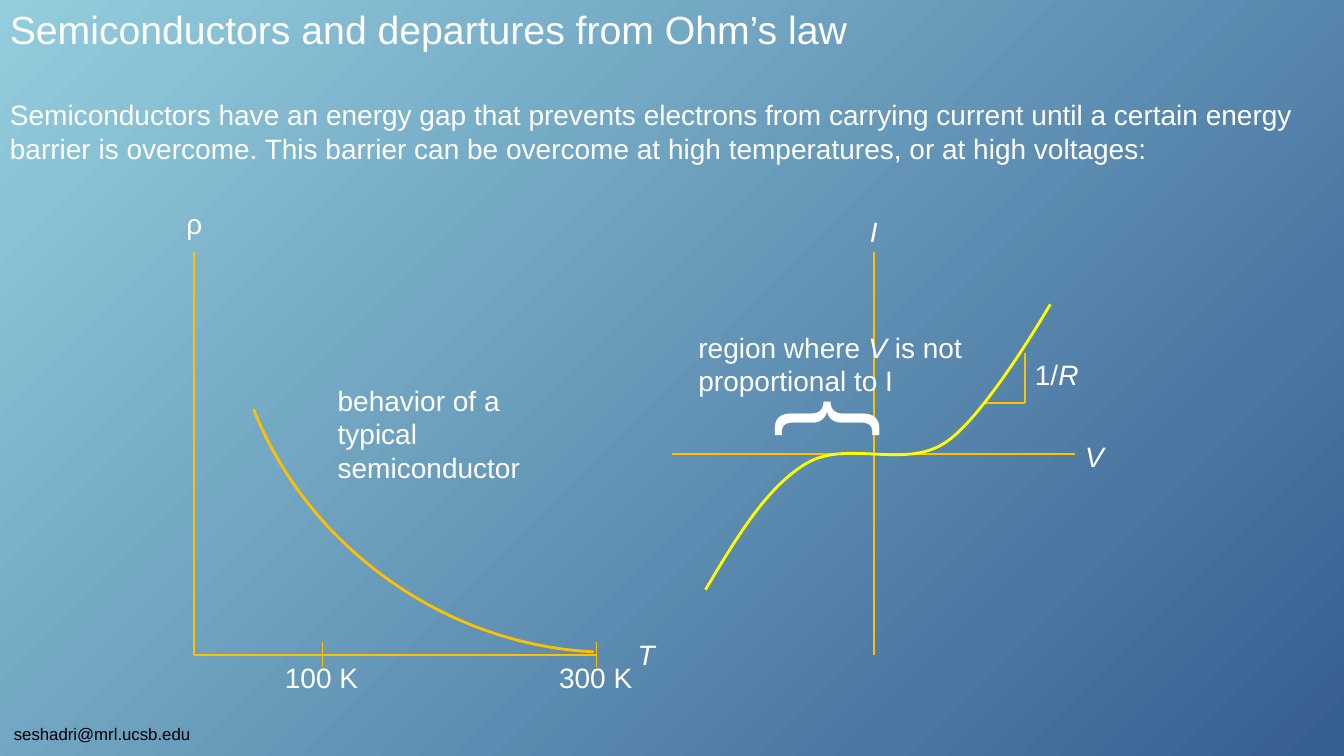
"""Build the slide on semiconductors and departures from Ohm's law."""
from lxml.etree import SubElement
from pptx import Presentation
from pptx.dml.color import RGBColor
from pptx.enum.shapes import MSO_CONNECTOR, MSO_SHAPE
from pptx.enum.text import MSO_AUTO_SIZE
from pptx.oxml.ns import qn
from pptx.util import Cm, Pt

COLORS = {
    "sky": "93CDDD",
    "navy": "376092",
    "text": "FFFFFF",
    "footer": "000000",
    "axis": "FFC000",
    "current": "FFFF00",
}
FONT = "Arial"
AXIS_TOP, AXIS_BOTTOM = 6.35, 16.51
CURRENT_START = (17.78, 14.86)
CURRENT_SEGMENTS = [
    [(18.54, 13.59), (19.3, 12.29), (20.32, 11.68)],
    [(21.34, 11.07), (22.81, 11.84), (23.83, 11.15)],
    [(24.84, 10.49), (26.47, 7.67), (26.47, 7.67)],
]


def color(name):
    """Return the named palette colour."""
    return RGBColor.from_string(COLORS[name])


def paint_background(slide):
    """Fill the slide with the diagonal gradient."""
    fill = slide.background.fill
    fill.gradient()
    fill.gradient_angle = 315
    for stop, name, position in zip(fill.gradient_stops, ("sky", "navy"), (0, 0.99)):
        stop.color.rgb = color(name)
        stop.position = position


def add_label(slide, box, runs, size=20, wrap=False, ink="text", rotation=0):
    """Add a text box from (text, italic) runs."""
    label = slide.shapes.add_textbox(*map(Cm, box))
    label.rotation = rotation
    frame = label.text_frame
    frame.word_wrap = wrap
    frame.auto_size = MSO_AUTO_SIZE.SHAPE_TO_FIT_TEXT
    for text, italic in runs:
        run = frame.paragraphs[0].add_run()
        run.text = text
        run.font.name = FONT
        run.font.size = Pt(size)
        run.font.italic = italic
        run.font.color.rgb = color(ink)


def add_line(slide, start, end, width=1.5):
    """Add a straight axis-coloured line."""
    line = slide.shapes.add_connector(
        MSO_CONNECTOR.STRAIGHT, *map(Cm, (*start, *end)))
    line.line.color.rgb = color("axis")
    line.line.width = Pt(width)
    SubElement(line._element.spPr, qn("a:effectLst"))


def style_curve(curve, ink):
    """Leave a curve unfilled and give it its stroke."""
    curve.shadow.inherit = False
    curve.fill.background()
    curve.line.color.rgb = color(ink)
    curve.line.width = Pt(2)


def bezier_points(start, segments, steps=24):
    """Return points along joined cubic segments, after the start."""
    points = []
    for first, second, end in segments:
        for step in range(1, steps + 1):
            t = step / steps
            weights = ((1 - t) ** 3, 3 * t * (1 - t) ** 2, 3 * t ** 2 * (1 - t), t ** 3)
            points.append(tuple(
                sum(w * c for w, c in zip(weights, coords))
                for coords in zip(start, first, second, end)))
        start = end
    return points


def add_resistivity_plot(slide):
    """Draw resistivity against temperature."""
    decay = slide.shapes.add_shape(
        MSO_SHAPE.ARC, Cm(5.51), Cm(0.05), Cm(17.98), Cm(16.08))
    decay.adjustments[0] = 139.82
    decay.adjustments[1] = 186.53
    decay.rotation = 213.8
    style_curve(decay, "axis")

    left, right = 4.88, 15.04
    add_line(slide, (left, AXIS_TOP), (left, AXIS_BOTTOM))
    add_line(slide, (left, AXIS_BOTTOM), (right, AXIS_BOTTOM))
    for temperature, tick in (("100 K", 8.13), ("300 K", right)):
        add_line(slide, (tick, 16.17), (tick, 16.8), width=1)
        add_label(slide, (tick - 1.2, AXIS_BOTTOM, 2.39, 1.12), [(temperature, False)])
    add_label(slide, (15.82, 15.95, 0.91, 1.12), [("T", True)])
    add_label(slide, (4.45, 5.08, 0.91, 1.12), [("ρ", False)])
    add_label(slide, (8.26, 9.53, 5.92, 2.82),
              [("behavior of a typical semiconductor", False)], wrap=True)


def add_current_plot(slide):
    """Draw current against voltage."""
    center_x, center_y, reach = 22.02, 11.43, 5.08
    add_line(slide, (center_x, AXIS_TOP), (center_x, AXIS_BOTTOM))
    add_line(slide, (center_x - reach, center_y), (center_x + reach, center_y))

    corner = (25.83, 10.16)
    add_line(slide, (24.77, 10.16), corner)
    add_line(slide, corner, (25.83, 8.89))

    builder = slide.shapes.build_freeform(*map(Cm, CURRENT_START))
    builder.add_line_segments(
        [(Cm(x), Cm(y)) for x, y in bezier_points(CURRENT_START, CURRENT_SEGMENTS)],
        close=False)
    style_curve(builder.convert_to_shape(), "current")

    add_label(slide, (27.1, 10.95, 0.99, 1.12), [("V", True)])
    add_label(slide, (21.67, 5.28, 0.71, 1.12), [("I", True)])
    add_label(slide, (25.83, 8.89, 1.63, 1.12), [("1/", False), ("R", True)])
    add_label(slide, (17.35, 8.2, 8.26, 1.96),
              [("region where ", False), ("V", True),
               (" is not proportional to I", False)], wrap=True)
    add_label(slide, (20.12, 9.09, 0.71, 3.68), [("}", False)],
              size=80, wrap=True, rotation=270)


def main():
    """Build and save the slide."""
    deck = Presentation()
    deck.slide_width, deck.slide_height = Cm(33.87), Cm(19.05)
    slide = deck.slides.add_slide(deck.slide_layouts[6])
    paint_background(slide)
    add_label(slide, (0.1, 18.1, 5.5, 0.76), [("seshadri@mrl.ucsb.edu", False)],
              size=12, wrap=True, ink="footer")
    add_label(slide, (0, 0, 33.87, 1.45),
              [("Semiconductors and departures from Ohm’s law", False)],
              size=28, wrap=True)
    add_label(slide, (0, 2.34, 33.87, 1.96),
              [("Semiconductors have an energy gap that prevents electrons from "
                "carrying current until a certain energy barrier is overcome. This "
                "barrier can be overcome at high temperatures, or at high voltages:",
                False)], wrap=True)
    add_resistivity_plot(slide)
    add_current_plot(slide)
    deck.save("out.pptx")


if __name__ == "__main__":
    main()
